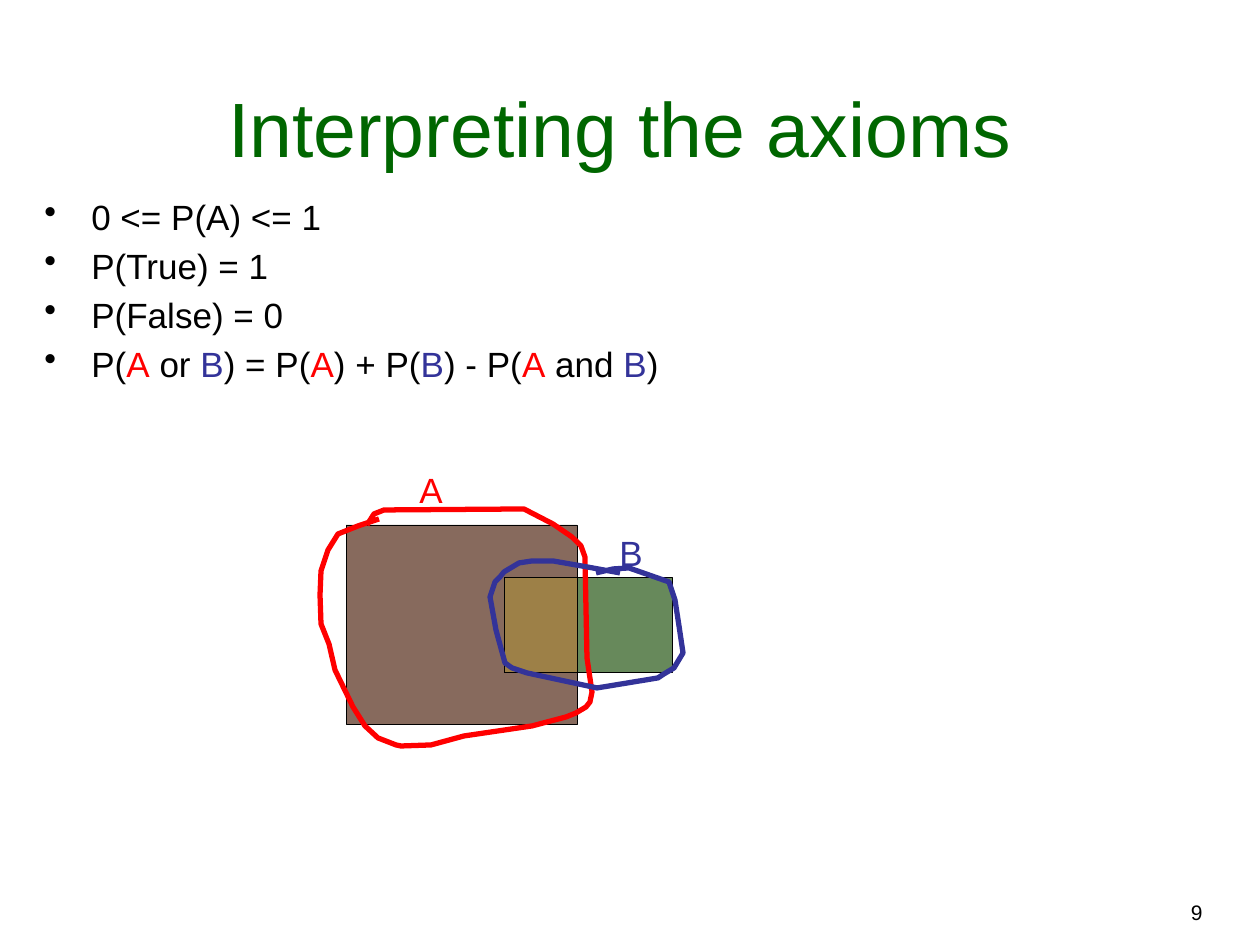
from lxml.etree import SubElement
from pptx import Presentation
from pptx.dml.color import RGBColor
from pptx.enum.text import MSO_ANCHOR as Anchor, PP_ALIGN as Align
from pptx.oxml.ns import qn
from pptx.util import Pt

PX = 914400 / 126
COLORS = {
    "text": "000000", "title": "006600", "a": "FF0000", "b": "333399",
    "a_fill": "876A5D", "b_fill": "67895B", "both_fill": "9D8047",
}
EVENT_COLORS = {"A": "a", "B": "b"}
AXIOMS = [
    ["0 <= P(A) <= 1"],
    ["P(True) = 1"],
    ["P(False) = 0"],
    ["P(", "A", " or ", "B", ") = P(", "A", ") + P(", "B", ") - P(",
     "A", " and ", "B", ")"],
]
A_OUTLINE = [
    (379, 519), (358, 526), (338, 534), (328, 550), (321, 571), (320, 595),
    (321, 624), (329, 644), (335, 670), (353, 707), (365, 726), (378, 738),
    (396, 745), (401, 746), (431, 745), (464, 736), (532, 726), (566, 717),
    (576, 713), (586, 707), (590, 702), (592, 692), (587, 658), (585, 557),
    (581, 546), (572, 537), (553, 524), (524, 509), (384, 510), (374, 514),
    (367, 525),
]
B_OUTLINE = [
    (620, 573), (587, 567), (553, 561), (532, 561), (519, 563), (504, 572),
    (500, 577), (495, 582), (490, 597), (496, 630), (505, 663), (512, 668),
    (527, 673), (597, 688), (658, 678), (664, 674), (674, 668), (683, 653),
    (679, 626), (675, 600), (669, 582), (649, 575), (629, 568), (613, 569),
    (596, 573),
]


def px(*lengths):
    return [round(length * PX) for length in lengths]


def rgb(name):
    return RGBColor.from_string(COLORS[name])


class SlideBuilder:
    font_name = "Arial"

    def __init__(self, slide):
        self.slide = slide

    def style(self, paragraph, size, color):
        paragraph.font.name = self.font_name
        paragraph.font.size = Pt(size)
        paragraph.font.color.rgb = rgb(color)

    def text(self, box, text, size, color, align=Align.CENTER,
             anchor=Anchor.TOP, wrap=True):
        frame = self.slide.shapes.add_textbox(*px(*box)).text_frame
        frame.word_wrap = wrap
        frame.vertical_anchor = anchor
        paragraph = frame.paragraphs[0]
        paragraph.text = text
        paragraph.alignment = align
        self.style(paragraph, size, color)

    def bullets(self, box, items, size):
        frame = self.slide.shapes.add_textbox(*px(*box)).text_frame
        frame.word_wrap = True
        for index, parts in enumerate(items):
            paragraph = frame.add_paragraph() if index else frame.paragraphs[0]
            paragraph.space_before = Pt(size * 0.2)
            properties = paragraph._p.get_or_add_pPr()
            indent = px(47)[0]
            properties.set("marL", str(indent))
            properties.set("indent", str(-indent))
            SubElement(properties, qn("a:buChar")).set("char", "•")
            self.style(paragraph, size, "text")
            for part in parts:
                run = paragraph.add_run()
                run.text = part
                if part in EVENT_COLORS:
                    run.font.color.rgb = rgb(EVENT_COLORS[part])

    def rectangle(self, box, fill):
        shape = self.slide.shapes.add_shape(1, *px(*box))
        shape.shadow.inherit = False
        shape.fill.solid()
        shape.fill.fore_color.rgb = rgb(fill)
        shape.line.color.rgb = rgb("text")
        shape.line.width = Pt(0.25)

    def outline(self, points, color):
        builder = self.slide.shapes.build_freeform(*points[0], scale=PX)
        builder.add_line_segments(points[1:], close=False)
        shape = builder.convert_to_shape()
        shape.shadow.inherit = False
        shape.fill.background()
        shape.line.color.rgb = rgb(color)
        shape.line.width = Pt(3)
        SubElement(shape.line._get_or_add_ln(), qn("a:round"))


def main():
    presentation = Presentation()
    presentation.slide_width, presentation.slide_height = px(1260, 945)
    slide = presentation.slides.add_slide(presentation.slide_layouts[6])
    builder = SlideBuilder(slide)

    builder.text((721, 893, 494, 38), "9", 12, "text", align=Align.RIGHT)
    builder.text((32, 32, 1176, 147), "Interpreting the axioms", 44, "title",
                 anchor=Anchor.BOTTOM)
    builder.bullets((32, 189, 683, 220), AXIOMS, 20)

    builder.rectangle((346, 525, 231, 199), "a_fill")
    builder.rectangle((504, 577, 168, 95), "b_fill")
    builder.rectangle((504, 577, 73, 95), "both_fill")
    builder.outline(A_OUTLINE, "a")
    builder.text((407, 462, 47, 54), "A", 20, "a", wrap=False)
    builder.outline(B_OUTLINE, "b")
    builder.text((607, 525, 46, 54), "B", 20, "b", wrap=False)

    presentation.save("out.pptx")


if __name__ == "__main__":
    main()
